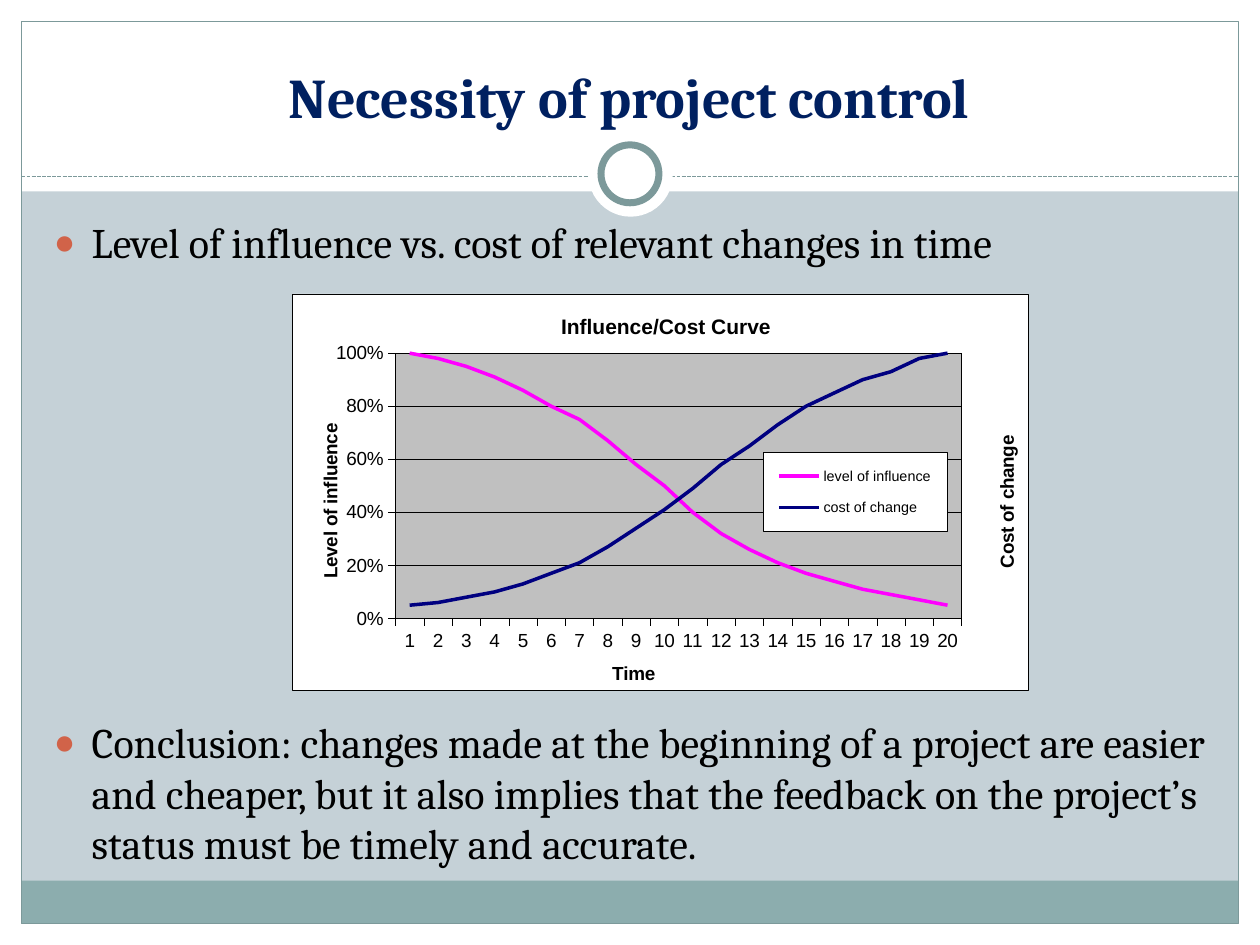
"""Build the project control slide with its influence and cost chart."""
import copy

import pptx
import pptx.chart.data
import pptx.dml.color
import pptx.enum.chart
import pptx.enum.dml
import pptx.enum.shapes
import pptx.enum.text
import pptx.oxml
import pptx.oxml.ns
import pptx.util

Pt = pptx.util.Pt
qn = pptx.oxml.ns.qn
NS = pptx.oxml.ns.nsdecls("c", "a")


def rgb(text):
    return pptx.dml.color.RGBColor.from_string(text)


def place(el, x, y, extra=""):
    """Give a chart part a manual layout in shares of its chart."""
    for old in el.findall(qn("c:layout")):
        el.remove(old)
    layout = pptx.oxml.parse_xml(
        f'<c:layout {NS}><c:manualLayout>{extra}<c:xMode val="edge"/><c:yMode val="edge"/>'
        f'<c:x val="{x}"/><c:y val="{y}"/></c:manualLayout></c:layout>')
    heads = [c for c in el if c.tag in (qn("c:tx"), qn("c:legendPos"))]
    el.insert(el.index(heads[-1]) + 1 if heads else 0, layout)
    return layout[0]


prs = pptx.Presentation()
cell = pptx.util.Inches(0.1)
cols, rows = 100, 75
prs.slide_width, prs.slide_height = cols * cell, rows * cell
slide = prs.slides.add_slide(prs.slide_layouts[5])
slide.background.fill.solid()
slide.background.fill.fore_color.rgb = rgb("C5D1D7")

edge, band = 1.7, 15.2
inner = cols - 2 * edge
RECT, OVAL = pptx.enum.shapes.MSO_SHAPE.RECTANGLE, pptx.enum.shapes.MSO_SHAPE.OVAL
for kind, x, y, w, h, fill, line in [
    (RECT, 0, rows - edge, cols, edge, "FFFFFF", 0),
    (RECT, 0, 0, cols, band, "FFFFFF", 0),
    (RECT, 0, 0, edge, rows, "FFFFFF", 0),
    (RECT, cols - edge, 0, edge, rows, "FFFFFF", 0),
    (RECT, edge, 69.9, inner, 3.4, "8CADAE", 0),
    (RECT, edge, edge, inner, rows - 2 * edge, None, 0.75),
    (None, edge, 14, inner, 0, None, 0.75),
    (OVAL, 46.7, 10.5, 6.7, 6.7, "FFFFFF", 0),
    (OVAL, 47.7, 11.5, 4.6, 4.6, "FFFFFF", 4),
]:
    x, y, w, h = [int(v * cell) for v in (x, y, w, h)]
    if kind is None:
        sp = slide.shapes.add_connector(pptx.enum.shapes.MSO_CONNECTOR.STRAIGHT, x, y, x + w, y)
        sp.line.dash_style = pptx.enum.dml.MSO_LINE.SQUARE_DOT
        sp._element.spPr.append(pptx.oxml.parse_xml(f"<a:effectLst {NS}/>"))
    else:
        sp = slide.shapes.add_shape(kind, x, y, w, h)
        sp.shadow.inherit = False
        if fill:
            sp.fill.solid()
            sp.fill.fore_color.rgb = rgb(fill)
        else:
            sp.fill.background()
    if line:
        sp.line.color.rgb = rgb("7C999A")
        sp.line.width = Pt(line)
    else:
        sp.line.fill.background()

title = slide.shapes.title
slide.shapes._spTree.append(title._element)
title.left, title.top, title.width, title.height = [int(v * cell) for v in (3.3, 2.5, 93.3, 8.3)]
body = slide.shapes.add_textbox(*[int(v * cell) for v in (3.3, 16.7, 94, 50)])
for sp, anchor, size, color, texts in [
    (title, "BOTTOM", 32, "002060", ["Necessity of project control"]),
    (body, "TOP", 24, "000000", [
        "Level of influence vs. cost of relevant changes in time",
        "Conclusion: changes made at the beginning of a project are easier and cheaper, but it also "
        "implies that the feedback on the project’s status must be timely and accurate."]),
]:
    tf = sp.text_frame
    tf.word_wrap = True
    tf.auto_size = pptx.enum.text.MSO_AUTO_SIZE.NONE
    tf.vertical_anchor = getattr(pptx.enum.text.MSO_ANCHOR, anchor)
    for i, text in enumerate(texts):
        p = tf.add_paragraph() if i else tf.paragraphs[0]
        r = p.add_run()
        r.text = text
        r.font.name, r.font.size, r.font.bold = "Cambria", Pt(size), sp is title
        r.font.color.rgb = rgb(color)
        if sp is title:
            p.alignment = pptx.enum.text.PP_ALIGN.CENTER
            continue
        p.space_before = Pt(257 if i else 0)
        pPr = p._p.get_or_add_pPr()
        pPr.set("marL", str(3 * cell))
        pPr.set("indent", str(-3 * cell))
        for xml in ('<a:buClr {}><a:srgbClr val="D16349"/></a:buClr>', '<a:buSzPct {} val="85000"/>',
                    '<a:buFont {} typeface="Arial"/>', '<a:buChar {} char="●"/>'):
            pPr.append(pptx.oxml.parse_xml(xml.format(NS)))

data = pptx.chart.data.CategoryChartData(number_format="0%")
data.categories = [str(n) for n in range(1, 21)]
data.add_series("level of influence", [1, 0.98, 0.95, 0.91, 0.86, 0.8, 0.75, 0.67, 0.58, 0.5, 0.4,
                                       0.32, 0.26, 0.21, 0.17, 0.14, 0.11, 0.09, 0.07, 0.05])
data.add_series("cost of change", [0.05, 0.06, 0.08, 0.1, 0.13, 0.17, 0.21, 0.27, 0.34, 0.41, 0.49,
                                   0.58, 0.65, 0.73, 0.8, 0.85, 0.9, 0.93, 0.98, 1])
chart = slide.shapes.add_chart(
    pptx.enum.chart.XL_CHART_TYPE.LINE, *[int(v * cell) for v in (23.2, 23.3, 58.4, 31.5)], data).chart
chart.font.name, chart.font.size = "Arial", Pt(9)
chart.font.color.rgb = rgb("000000")
chart.plots[0].vary_by_categories = False
for series, color in zip(chart.plots[0].series, ("FF00FF", "000080")):
    series.smooth = False
    series.format.line.color.rgb = rgb(color)
    series.format.line.width = Pt(2)
    series.marker.style = pptx.enum.chart.XL_MARKER_STYLE.NONE

cat, val = chart.category_axis, chart.value_axis
val.minimum_scale, val.maximum_scale, val.major_unit = 0, 1, 0.2
val.tick_labels.number_format, val.tick_labels.number_format_is_linked = "0%", False
val.has_major_gridlines = True
for line in (cat.format.line, val.format.line, val.major_gridlines.format.line):
    line.color.rgb = rgb("000000")
    line.width = Pt(0.25)
for axis in (cat, val):
    axis.major_tick_mark = pptx.enum.chart.XL_TICK_MARK.OUTSIDE
    axis.minor_tick_mark = pptx.enum.chart.XL_TICK_MARK.NONE
    axis.tick_labels.font.size = Pt(10.8)
    axis.tick_labels.font.name = "Arial"
    axis.tick_labels.font.color.rgb = rgb("000000")
for holder, text, size, x, y in [
    (chart.chart_title, "Influence/Cost Curve", 12, 0.36, 0.04),
    (cat.axis_title, "Time", 10.8, 0.43, 0.92),
    (val.axis_title, "Level of influence", 10.8, 0.03, 0.32),
]:
    r = holder.text_frame.paragraphs[0].add_run()
    r.text = text
    r.font.name, r.font.size, r.font.bold = "Arial", Pt(size), True
    r.font.color.rgb = rgb("000000")
    place(holder._element, x, y)
val.axis_title.text_frame._txBody.find(qn("a:bodyPr")).set("rot", "-5400000")

chart.has_legend = True
legend = chart.legend
legend.position = pptx.enum.chart.XL_LEGEND_POSITION.RIGHT
legend.include_in_layout = False
legend.font.name, legend.font.size = "Arial", Pt(8.2)
legend.font.color.rgb = rgb("000000")

plot_area = chart._chartSpace.chart.plotArea
left = plot_area.find(qn("c:lineChart"))
right = copy.deepcopy(left)
left.remove(left.findall(qn("c:ser"))[1])
right.remove(right.find(qn("c:ser")))
left.addnext(right)
cat2, val2 = copy.deepcopy(cat._element), copy.deepcopy(val._element)
val._element.addnext(val2)
val2.addnext(cat2)
ids = {el.get("val"): str(n) for n, el in enumerate(left.findall(qn("c:axId")), 501)}
for part in (right, cat2, val2):
    for el in part.findall(qn("c:axId")) + part.findall(qn("c:crossAx")):
        el.set("val", ids[el.get("val")])
cat2.remove(cat2.find(qn("c:title")))
cat2.find(qn("c:delete")).set("val", "1")
val2.remove(val2.find(qn("c:majorGridlines")))
for tag, value in (("axPos", "r"), ("majorTickMark", "none"), ("tickLblPos", "none"), ("crosses", "max")):
    val2.find(qn("c:" + tag)).set("val", value)
val2.find(".//" + qn("a:t")).text = "Cost of change"
place(val2.find(qn("c:title")), 0.95, 0.35)

for el, box, extra in [
    (plot_area, (0.14, 0.15, 0.77, 0.67), '<c:layoutTarget val="inner"/>'),
    (legend._element, (0.64, 0.4, 0.25, 0.2), ""),
]:
    manual = place(el, *box[:2], extra)
    for tag, size in zip("wh", box[2:]):
        manual.append(pptx.oxml.parse_xml(f'<c:{tag} {NS} val="{size}"/>'))
for anchor, fill in [
    (plot_area[-1], "C0C0C0"),
    (legend._element.find(qn("c:overlay")), "FFFFFF"),
    (chart._chartSpace.chart, "FFFFFF"),
]:
    anchor.addnext(pptx.oxml.parse_xml(
        f'<c:spPr {NS}><a:solidFill><a:srgbClr val="{fill}"/></a:solidFill><a:ln w="3175">'
        '<a:solidFill><a:srgbClr val="000000"/></a:solidFill></a:ln></c:spPr>'))

prs.save("out.pptx")
